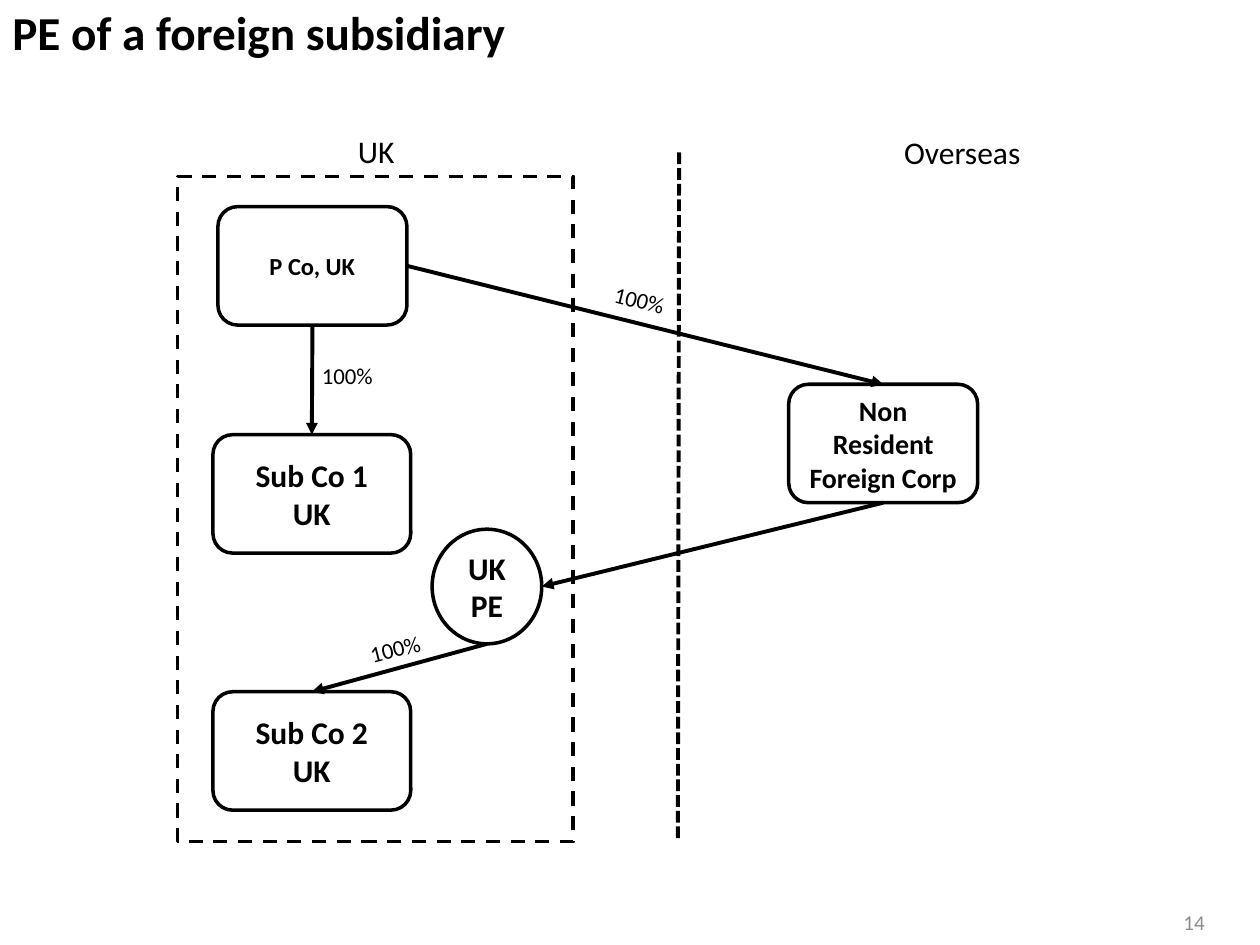
import pptx
import pptx.dml.color
import pptx.enum.dml
import pptx.enum.shapes
import pptx.enum.text
import pptx.oxml
import pptx.oxml.ns
import pptx.util

Inches, Pt = pptx.util.Inches, pptx.util.Pt
SHAPE = pptx.enum.shapes.MSO_SHAPE
DASH = pptx.enum.dml.MSO_LINE
ALIGN = pptx.enum.text.PP_ALIGN
ANCHOR = pptx.enum.text.MSO_ANCHOR

THEME = {
    "font": "Calibri", "ink": "000000", "paper": "FFFFFF", "muted": "8C8C8C",
    "title": 27, "heading": 18, "entity": 18, "foreign": 16, "parent": 14,
    "share": 13, "page": 12, "outline": 2, "link": 2.25,
}

# Boxes are (left, top, width, height) in inches.
UK_GROUP = (1.41, 1.4, 3.14, 5.28)
BORDER = ((5.39, 1.21), (5.38, 6.68))

ENTITIES = {
    "parent": (SHAPE.ROUNDED_RECTANGLE, (1.73, 1.64, 1.5, 0.94), ["P Co, UK"], "parent"),
    "sub 1": (SHAPE.ROUNDED_RECTANGLE, (1.69, 3.45, 1.57, 0.94), ["Sub Co 1", "UK"], "entity"),
    "foreign": (SHAPE.ROUNDED_RECTANGLE, (6.26, 3.05, 1.5, 0.94),
                ["Non Resident Foreign Corp"], "foreign"),
    "sub 2": (SHAPE.ROUNDED_RECTANGLE, (1.69, 5.49, 1.57, 0.94), ["Sub Co 2", "UK"], "entity"),
    "branch": (SHAPE.OVAL, (3.43, 4.2, 0.87, 0.91), ["UK PE"], "entity"),
}

OWNERSHIP = [
    ("parent", "right", "foreign", "top"),
    ("parent", "bottom", "sub 1", "top"),
    ("foreign", "bottom", "branch", "right"),
    ("branch", "bottom", "sub 2", "top"),
]

SHARE = "100%"
SHARE_LABELS = [(1.93, 2.82, 0), (2.31, 4.99, -14.4), (4.25, 2.22, 14)]  # left, top, angle
SHARE_SIZE = (1.65, 0.32)

CAPTIONS = [
    ("PE of a foreign subsidiary", (0, -0.02, 10, 0.56), "title",
     {"alignment": ALIGN.LEFT, "bold": True}),
    ("UK", (1.41, 1, 3.15, 0.4), "heading", {}),
    ("Overseas ", (5.39, 1.01, 4.55, 0.4), "heading", {}),
    ("14", (7.33, 7.12, 2.33, 0.4), "page",
     {"alignment": ALIGN.RIGHT, "color": "muted", "anchor": ANCHOR.MIDDLE}),
]


def rgb(role):
    return pptx.dml.color.RGBColor.from_string(THEME[role])


def write(shape, lines, size, alignment=ALIGN.CENTER, bold=False, color="ink", anchor=ANCHOR.TOP):
    frame = shape.text_frame
    frame.word_wrap = True
    frame.vertical_anchor = anchor
    font_format = {"name": THEME["font"], "size": Pt(THEME[size]), "bold": bold}
    for index, line in enumerate(lines):
        paragraph = frame.add_paragraph() if index else frame.paragraphs[0]
        paragraph.alignment = alignment
        run = paragraph.add_run()
        run.text = line
        for attribute, value in font_format.items():
            setattr(run.font, attribute, value)
        run.font.color.rgb = rgb(color)


def add_caption(slide, text, box, size, **text_format):
    caption = slide.shapes.add_textbox(*map(Inches, box))
    write(caption, [text], size, **text_format)
    return caption


def add_outlined(slide, preset, box):
    outlined = slide.shapes.add_shape(preset, *map(Inches, box))
    outlined.shadow.inherit = False
    outlined.fill.solid()
    outlined.fill.fore_color.rgb = rgb("paper")
    outlined.line.color.rgb = rgb("ink")
    outlined.line.width = Pt(THEME["outline"])
    return outlined


def add_link(slide, start, end):
    link = slide.shapes.add_connector(
        pptx.enum.shapes.MSO_CONNECTOR.STRAIGHT, *map(Inches, (*start, *end)))
    link.line.color.rgb = rgb("ink")
    link.line.width = Pt(THEME["link"])
    properties = link._element.spPr
    properties.append(pptx.oxml.parse_xml(f"<a:effectLst {pptx.oxml.ns.nsdecls('a')}/>"))
    return link


def add_arrowhead(link):
    link.line._get_or_add_ln().append(pptx.oxml.parse_xml(
        f'<a:tailEnd {pptx.oxml.ns.nsdecls("a")} type="triangle"/>'))


def side_midpoint(entity, side):
    left, top, width, height = ENTITIES[entity][1]
    across, down = {"top": (0.5, 0), "right": (1, 0.5), "bottom": (0.5, 1)}[side]
    return left + across * width, top + down * height


def main():
    deck = pptx.Presentation()
    deck.slide_width, deck.slide_height = Inches(10), Inches(7.5)
    slide = deck.slides.add_slide(deck.slide_layouts[6])

    add_outlined(slide, SHAPE.RECTANGLE, UK_GROUP).line.dash_style = DASH.DASH
    add_link(slide, *BORDER).line.dash_style = DASH.SQUARE_DOT

    for preset, box, lines, size in ENTITIES.values():
        entity = add_outlined(slide, preset, box)
        write(entity, lines, size, bold=True, anchor=ANCHOR.MIDDLE)

    for owner, exit_side, owned, entry_side in OWNERSHIP:
        add_arrowhead(add_link(
            slide, side_midpoint(owner, exit_side), side_midpoint(owned, entry_side)))

    for left, top, angle in SHARE_LABELS:
        add_caption(slide, SHARE, (left, top, *SHARE_SIZE), "share").rotation = angle
    for text, box, size, text_format in CAPTIONS:
        add_caption(slide, text, box, size, **text_format)

    deck.save("out.pptx")


if __name__ == "__main__":
    main()
